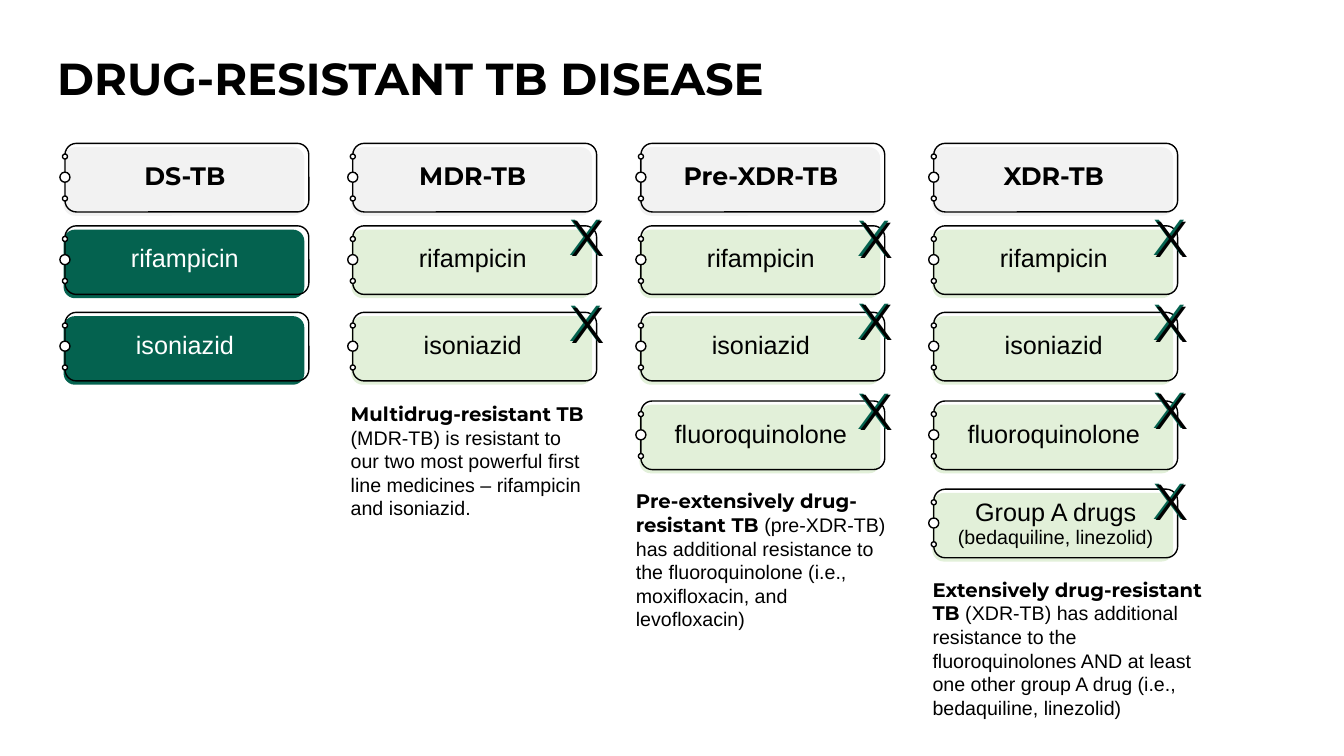
from pptx import Presentation
from pptx.dml.color import RGBColor
from pptx.enum.shapes import MSO_SHAPE as SHAPE
from pptx.enum.text import MSO_AUTO_SIZE as AUTO, PP_ALIGN as ALIGN
from pptx.oxml import parse_xml
from pptx.util import Pt

BLACK = RGBColor(0x00, 0x00, 0x00)
WHITE = RGBColor(0xFF, 0xFF, 0xFF)
GREY = RGBColor(0xF2, 0xF2, 0xF2)
GREEN = RGBColor(0x04, 0x62, 0x4F)
PALE_GREEN = RGBColor(0xE2, 0xF0, 0xD9)
HEAD, BODY = "Montserrat", "Arial"
OUTLINE = (
    '<a:ln xmlns:a="http://schemas.openxmlformats.org/drawingml/2006/main" w="9525">'
    '<a:solidFill><a:srgbClr val="000000"/></a:solidFill></a:ln>'
)

prs = Presentation()
prs.slide_width, prs.slide_height = Pt(960), Pt(540)
slide = prs.slides.add_slide(prs.slide_layouts[6])


def add_plate(parent, kind, box, fill=None, line=None):
    plate = parent.add_shape(kind, *map(Pt, box))
    plate.shadow.inherit = False
    if fill is None:
        plate.fill.background()
    else:
        plate.fill.solid()
        plate.fill.fore_color.rgb = fill
    if line is None:
        plate.line.fill.background()
    else:
        plate.line.color.rgb = line
        plate.line.width = Pt(1)


def add_text(parent, box, runs, align=ALIGN.LEFT, spacing=None, auto=AUTO.SHAPE_TO_FIT_TEXT):
    """Each run is (text, size, font, bold, colour); a run of None breaks the line."""
    frame = parent.add_textbox(*map(Pt, box)).text_frame
    frame.word_wrap = True
    frame.auto_size = auto
    paragraph = frame.paragraphs[0]
    paragraph.alignment = align
    paragraph.line_spacing = spacing
    for part in runs:
        if part is None:
            paragraph.add_line_break()
            continue
        run = paragraph.add_run()
        run.text, size, run.font.name, run.font.bold, colour = part
        run.font.size = Pt(size)
        run.font.color.rgb = colour
    return paragraph


# Title
add_text(slide.shapes, (33.8, 36.7, 670, 57),
         [("DRUG-RESISTANT TB DISEASE", 32, HEAD, True, BLACK)],
         spacing=0.9, auto=AUTO.NONE)

# Columns: left edge, heading, medicines, left and tops of the crosses
row_tops = [102.4, 161.3, 223.1, 286.4, 349.4]
medicines = ["rifampicin", "isoniazid", "fluoroquinolone", "Group A drugs"]
columns = [
    (46.4, "DS-TB", 2, 0, []),
    (252, "MDR-TB", 2, 392, [142.6, 204.5]),
    (457.8, "Pre-XDR-TB", 3, 598, [144, 203, 267]),
    (667, "XDR-TB", 4, 809, [143.3, 203.8, 266.4, 331.2]),
]

# Cards
for left, heading, count, _, cross_tops in columns:
    medicine_fill, medicine_colour = (PALE_GREEN, BLACK) if cross_tops else (GREEN, WHITE)
    for top, label in zip(row_tops, [heading] + medicines[:count]):
        is_heading = label == heading
        card = slide.shapes.add_group_shape().shapes
        add_plate(card, SHAPE.ROUNDED_RECTANGLE, (left - 1, top + 2.7, 172, 49),
                  fill=GREY if is_heading else medicine_fill)
        add_plate(card, SHAPE.ROUNDED_RECTANGLE, (left, top, 174.2, 49), line=BLACK)
        for dot_top, size in [(7.6, 3.6), (37.6, 3.6), (20.6, 7.2)]:
            add_plate(card, SHAPE.OVAL, (left - size / 2, top + dot_top, size, size),
                      fill=WHITE, line=BLACK)
        if label == "Group A drugs":
            add_text(card, (left, top + 7, 174.2, 39.6),
                     [(label, 18, BODY, False, BLACK), None,
                      ("(bedaquiline, linezolid)", 14, BODY, False, BLACK)],
                     ALIGN.CENTER, Pt(16))
        else:
            run = ((label, 18, HEAD, True, BLACK) if is_heading
                   else (label, 18, BODY, False, medicine_colour))
            add_text(card, (left + 6.5, top + 17.2, 158.4, 21.6), [run],
                     ALIGN.CENTER, Pt(13))

# Definitions
definitions = [
    ((243.4, 283.7, 188.6, 92), "Multidrug-resistant TB ",
     "(MDR-TB) is resistant to our two most powerful first line medicines – "
     "rifampicin and isoniazid."),
    ((447.1, 346, 200.2, 109), "Pre-extensively drug-resistant TB ",
     "(pre-XDR-TB) has additional resistance to the fluoroquinolone "
     "(i.e., moxifloxacin, and levofloxacin)"),
    ((659, 409.2, 212.4, 109), "Extensively drug-resistant TB ",
     "(XDR-TB) has additional resistance to the fluoroquinolones AND at least "
     "one other group A drug (i.e., bedaquiline, linezolid)"),
]
for box, term, meaning in definitions:
    add_text(slide.shapes, box, [(term, 14, HEAD, True, BLACK),
                                 (meaning, 14, BODY, False, BLACK)])

# Crosses: a green letter under an outlined black one
for *_, cross_left, cross_tops in columns:
    for cross_top in cross_tops:
        cross = slide.shapes.add_group_shape().shapes
        for shift, colour in [(0, GREEN), (1, BLACK)]:
            letter = add_text(cross, (cross_left + 1.5 * shift, cross_top + shift, 52.6, 51),
                              [("X", 36, HEAD, False, colour)], ALIGN.CENTER)
        letter.runs[0].font._element.insert(0, parse_xml(OUTLINE))

prs.save("out.pptx")
